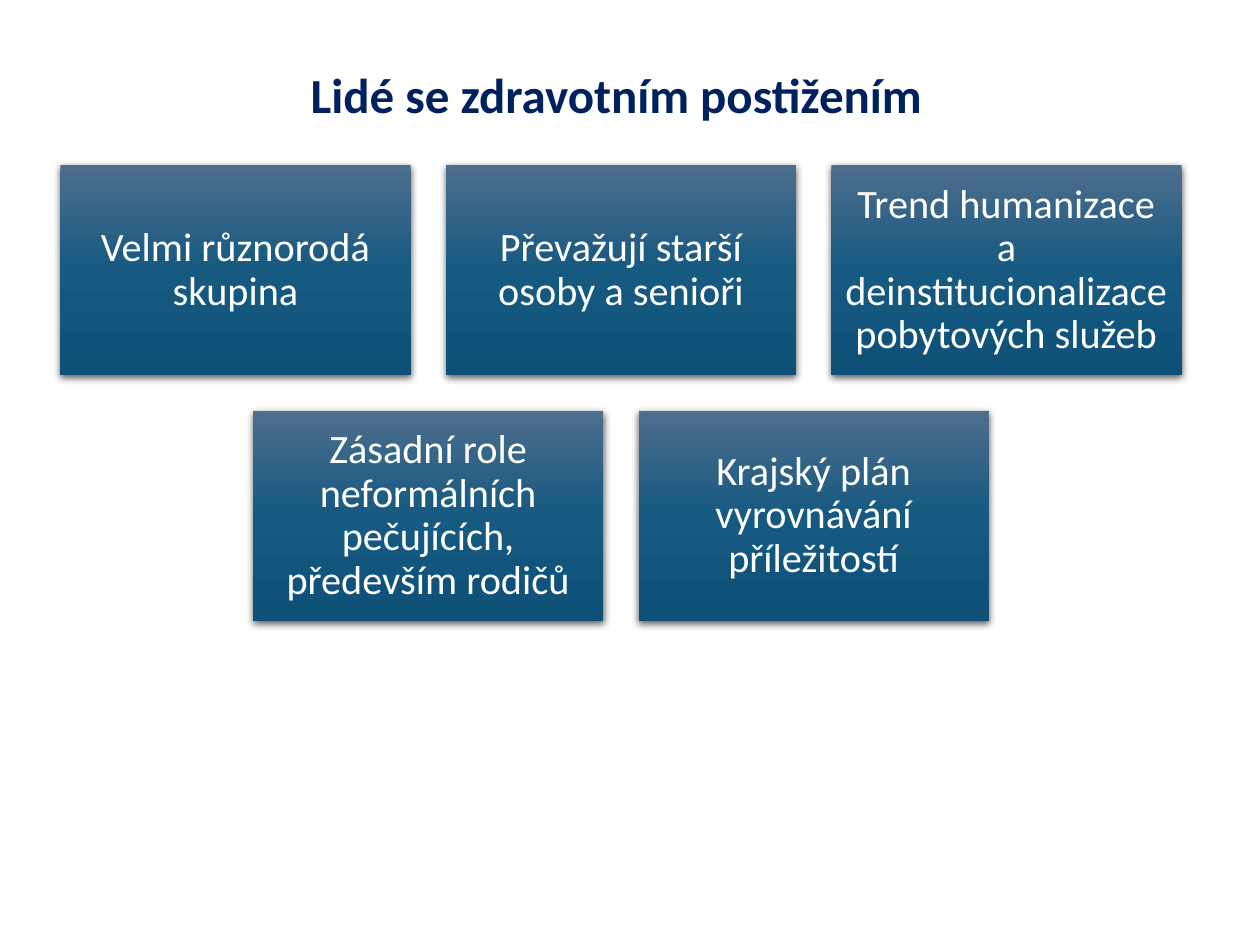
from dataclasses import dataclass

from lxml import etree
from pptx import Presentation
from pptx.dml.color import RGBColor
from pptx.enum.shapes import MSO_SHAPE
from pptx.enum.text import MSO_ANCHOR, PP_ALIGN
from pptx.oxml.ns import qn
from pptx.util import Cm, Pt

RECTANGLE = MSO_SHAPE.RECTANGLE
TOP, MIDDLE = MSO_ANCHOR.TOP, MSO_ANCHOR.MIDDLE
CENTER = PP_ALIGN.CENTER

COLORS = {
    "title": "002060",
    "card_text": "FFFFFF",
    "card_top": "4E6E8C",
    "card_middle": "165981",
    "card_bottom": "0F5077",
    "shadow": "000000",
}
FONT = "Calibri"
CARD_WIDTH, CARD_HEIGHT, CARD_GAP = 7.06, 4.24, 0.71
GRID_CENTER, GRID_TOP = 12.52, 3.33
CARD_ROWS = [
    [
        "Velmi různorodá skupina",
        "Převažují starší osoby a senioři",
        "Trend humanizace a deinstitucionalizace pobytových služeb",
    ],
    [
        "Zásadní role neformálních pečujících, především rodičů",
        "Krajský plán vyrovnávání příležitostí",
    ],
]


@dataclass
class Card:
    text: str
    left: float
    top: float


def layout_cards(rows: list[list[str]]) -> list[Card]:
    cards = []
    for row_index, row in enumerate(rows):
        row_width = len(row) * CARD_WIDTH + (len(row) - 1) * CARD_GAP
        row_left = GRID_CENTER - row_width / 2
        row_top = GRID_TOP + row_index * (CARD_HEIGHT + CARD_GAP)
        for column, text in enumerate(row):
            cards.append(Card(text, row_left + column * (CARD_WIDTH + CARD_GAP), row_top))
    return cards


def write_text(shape, text: str, size: float, color: str, anchor, bold: bool = False) -> None:
    frame = shape.text_frame
    frame.text = text
    frame.word_wrap = True
    frame.vertical_anchor = anchor
    paragraph = frame.paragraphs[0]
    paragraph.alignment = CENTER
    paragraph.line_spacing = 0.9
    font = paragraph.runs[0].font
    font.name = FONT
    font.size = Pt(size)
    font.bold = bold
    font.color.rgb = RGBColor.from_string(COLORS[color])


def add_color(parent, color: str):
    return etree.SubElement(parent, qn("a:srgbClr"), val=COLORS[color])


def apply_gradient(shape) -> None:
    gradient = etree.Element(qn("a:gradFill"), rotWithShape="1")
    stops = etree.SubElement(gradient, qn("a:gsLst"))
    for position, color in ((0, "card_top"), (50, "card_middle"), (100, "card_bottom")):
        add_color(etree.SubElement(stops, qn("a:gs"), pos=str(position * 1000)), color)
    etree.SubElement(gradient, qn("a:lin"), ang="5400000", scaled="0")
    shape.element.spPr.find(qn("a:prstGeom")).addnext(gradient)


def apply_shadow(shape) -> None:
    shape.shadow.inherit = False
    effects = shape.element.spPr.find(qn("a:effectLst"))
    shadow = etree.SubElement(
        effects, qn("a:outerShdw"), blurRad=str(Pt(4.5)), dist=str(Pt(1.5)),
        dir="5400000", algn="ctr", rotWithShape="0",
    )
    etree.SubElement(add_color(shadow, "shadow"), qn("a:alpha"), val="63000")


def add_card(slide, card: Card) -> None:
    shape = slide.shapes.add_shape(
        RECTANGLE, Cm(card.left), Cm(card.top), Cm(CARD_WIDTH), Cm(CARD_HEIGHT)
    )
    shape.line.fill.background()
    apply_gradient(shape)
    apply_shadow(shape)
    frame = shape.text_frame
    frame.margin_left = frame.margin_right = Cm(0.25)
    frame.margin_top = frame.margin_bottom = Cm(0.25)
    write_text(shape, card.text, 23, "card_text", MIDDLE)


def main() -> None:
    presentation = Presentation()
    presentation.slide_width, presentation.slide_height = Cm(25.4), Cm(19.05)
    slide = presentation.slides.add_slide(presentation.slide_layouts[6])
    title = slide.shapes.add_textbox(Cm(0.71), Cm(1.32), Cm(23.42), Cm(2.59))
    write_text(title, "Lidé se zdravotním postižením", 28, "title", TOP, bold=True)
    for card in layout_cards(CARD_ROWS):
        add_card(slide, card)
    presentation.save("out.pptx")


if __name__ == "__main__":
    main()
